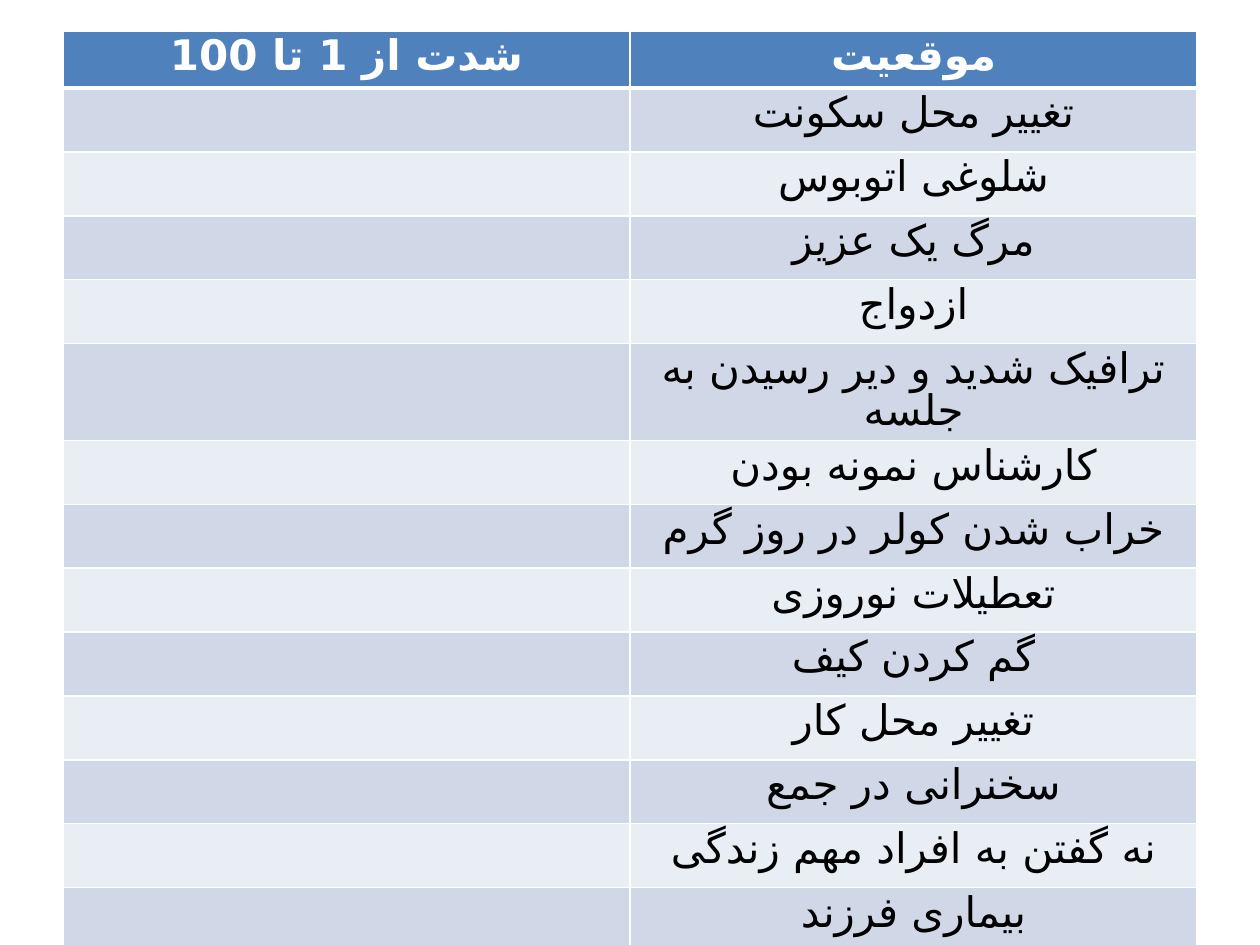
import pptx
import pptx.dml.color
import pptx.enum.text
import pptx.oxml.ns
import pptx.util
from lxml import etree

PX = 914400 / 126
FONT = "Calibri"
PERSIAN_FONT = "DejaVu Sans"
TEXT_SIZE = 24
LINE_SPACING = 0.86
COLORS = {
    "header": "4F81BD",
    "odd": "D0D8E8",
    "even": "E9EDF4",
    "border": "FFFFFF",
    "header_text": "FFFFFF",
    "text": "000000",
}
HEADERS = ["شدت از 1 تا 100", "موقعیت"]
SITUATIONS = [
    "تغییر محل سکونت",
    "شلوغی اتوبوس",
    "مرگ یک عزیز",
    "ازدواج",
    "ترافیک شدید و دیر رسیدن به جلسه",
    "کارشناس نمونه بودن",
    "خراب شدن کولر در روز گرم",
    "تعطیلات نوروزی",
    "گم کردن کیف",
    "تغییر محل کار",
    "سخنرانی در جمع",
    "نه گفتن به افراد مهم زندگی",
    "بیماری فرزند",
]


def px(length):
    return pptx.util.Emu(round(length * PX))


def rgb(name):
    return pptx.dml.color.RGBColor.from_string(COLORS[name])


def add_element(parent, tag, **attributes):
    return etree.SubElement(parent, pptx.oxml.ns.qn(tag), **attributes)


def set_borders(cell, bottom_width):
    properties = cell._tc.get_or_add_tcPr()
    widths = {"a:lnL": 1, "a:lnR": 1, "a:lnT": 1, "a:lnB": bottom_width}
    for position, (tag, width) in enumerate(widths.items()):
        line = add_element(properties, tag, w=str(pptx.util.Pt(width)))
        fill = add_element(line, "a:solidFill")
        add_element(fill, "a:srgbClr", val=COLORS["border"])
        properties.insert(position, line)


def fill_cell(cell, text, fill, text_color, bold=False, bottom_width=1):
    cell.fill.solid()
    cell.fill.fore_color.rgb = rgb(fill)
    set_borders(cell, bottom_width)

    para = cell.text_frame.paragraphs[0]
    para.text = text
    para.alignment = pptx.enum.text.PP_ALIGN.CENTER
    para._p.get_or_add_pPr().set("rtl", "1")
    for span in para.runs:
        span.font.name = FONT
        span.font.size = pptx.util.Pt(TEXT_SIZE)
        span.font.bold = bold
        span.font.color.rgb = rgb(text_color)
        add_element(span._r.get_or_add_rPr(), "a:cs", typeface=PERSIAN_FONT)
    if text:
        para.line_spacing = LINE_SPACING
    else:
        # An empty cell keeps the line height of the table text
        ending = add_element(para._p, "a:endParaRPr", sz=str(TEXT_SIZE * 100))
        add_element(ending, "a:latin", typeface=FONT)


def add_rating_table(page):
    row_count = len(SITUATIONS) + 1
    frame = page.shapes.add_table(
        row_count, len(HEADERS), px(63), px(31), px(1134), px(882))
    table = frame.table
    for column in table.columns:
        column.width = px(567)
    for row in table.rows:
        row.height = px(57)

    # Header row
    for cell, text in zip(table.rows[0].cells, HEADERS):
        fill_cell(cell, text, "header", "header_text", bold=True, bottom_width=3)

    # Banded rows with an empty rating beside each situation
    for number, situation in enumerate(SITUATIONS, start=1):
        band = "odd" if number % 2 else "even"
        for cell, text in zip(table.rows[number].cells, ["", situation]):
            fill_cell(cell, text, band, "text")


def main():
    deck = pptx.Presentation()
    deck.slide_width, deck.slide_height = px(1260), px(945)
    page = deck.slides.add_slide(deck.slide_layouts[6])
    add_rating_table(page)
    deck.save("out.pptx")


if __name__ == "__main__":
    main()
